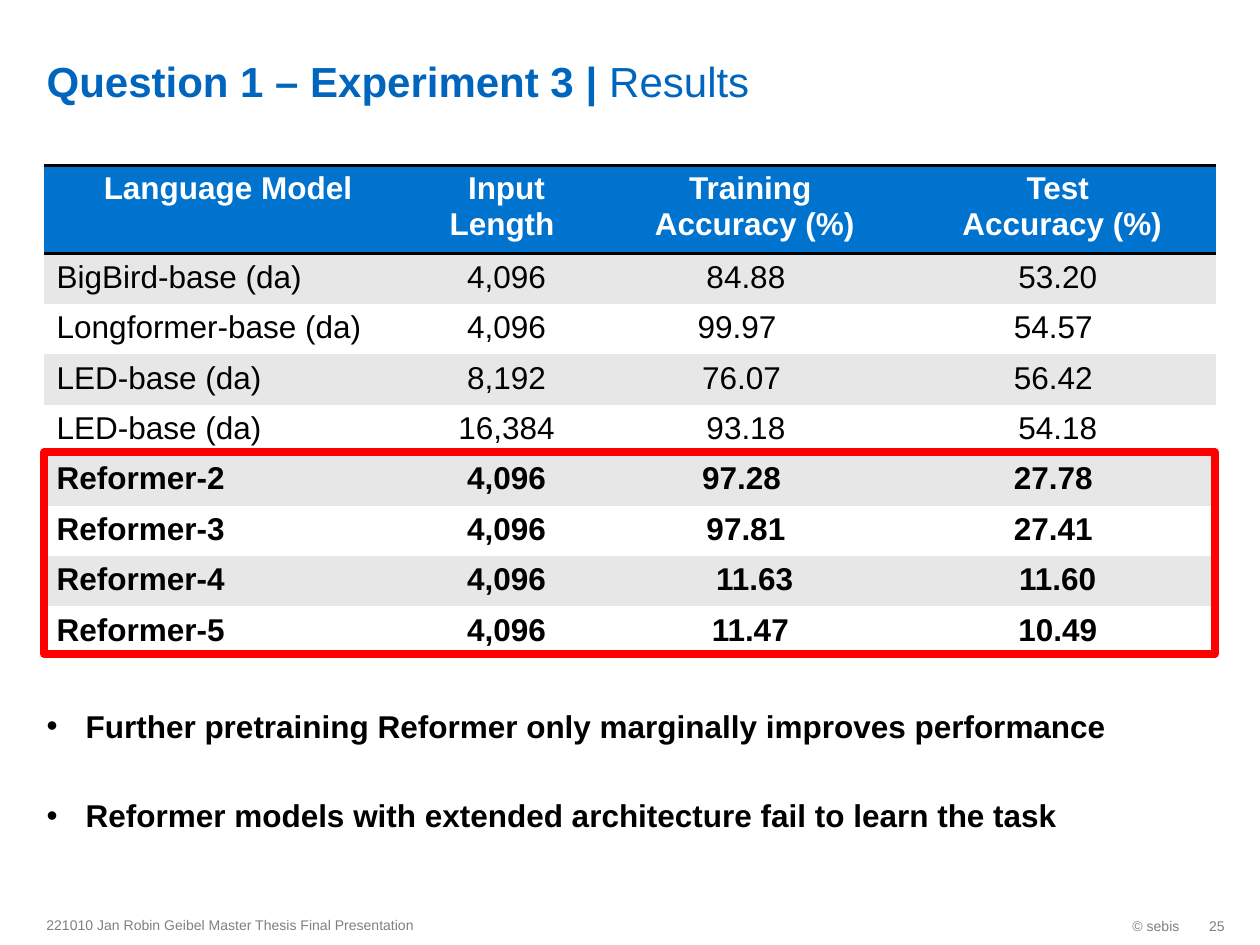
from pptx import Presentation
from pptx.dml.color import RGBColor
from pptx.enum.shapes import MSO_SHAPE as Shape
from pptx.enum.text import MSO_ANCHOR as Anchor, MSO_AUTO_SIZE as AutoSize, PP_ALIGN as Align
from pptx.oxml import parse_xml
from pptx.oxml.ns import nsdecls, qn
from pptx.util import Inches, Pt

BLUE, HEADER_BLUE, BLACK, WHITE = "0065BD", "0073CF", "000000", "FFFFFF"
GREY, BAND, RED = "808080", "E7E7E7", "FF0000"
NO_STYLE = "{2D5ABB26-0587-4C30-8999-92F81FD0307C}"
SPACE_WIDTH = 0.07

COLUMN_WIDTHS = [2.92, 1.5, 2.44, 2.44]
HEADERS = ["Language Model", "Input Length ", "Training \nAccuracy (%)", "Test \nAccuracy (%)"]
RESULTS = [
    ("BigBird-base (da)", "4,096", "84.88", "53.20"),
    ("Longformer-base (da)", "4,096", "99.97", "54.57"),
    ("LED-base (da)", "8,192", "76.07", "56.42"),
    ("LED-base (da)", "16,384", "93.18", "54.18"),
    ("Reformer-2", "4,096", "97.28", "27.78"),
    ("Reformer-3", "4,096", "97.81", "27.41"),
    ("Reformer-4", "4,096", "11.63", "11.60"),
    ("Reformer-5", "4,096", "11.47", "10.49"),
]
OFFSETS = {2: [2, 4, 3, 2, 3, 2, 0, 1], 3: [1, 2, 2, 1, 2, 2, 1, 1]}
FINDINGS = [
    "Further pretraining Reformer only marginally improves performance",
    "Reformer models with extended architecture fail to learn the task",
]


def color(value):
    return RGBColor.from_string(value)


def style(font, size, fill, bold=False):
    font.name = "Arial"
    font.size = Pt(size)
    font.bold = bold
    font.color.rgb = color(fill)


def place(shape, left, top, width, height):
    shape.left, shape.top = Inches(left), Inches(top)
    shape.width, shape.height = Inches(width), Inches(height)


def add_title(page, strong, light):
    title = page.shapes.title
    place(title, 0.27, 0.05, 8.24, 0.79)
    frame = title.text_frame
    frame.auto_size = AutoSize.NONE
    frame.vertical_anchor = Anchor.BOTTOM
    frame.margin_top = frame.margin_bottom = 0
    para = frame.paragraphs[0]
    para.alignment = Align.LEFT
    for text, bold in ((strong, True), (light, False)):
        span = para.add_run()
        span.text = text
        style(span.font, 24, BLUE, bold)


def add_findings(page):
    body = page.placeholders[1]
    place(body, 0.27, 5.56, 9.45, 1.34)
    frame = body.text_frame
    frame.auto_size = AutoSize.NONE
    frame.text = "\n".join(FINDINGS)
    for index, para in enumerate(frame.paragraphs):
        properties = para._p.get_or_add_pPr()
        properties.set("marL", str(Inches(0.31)))
        properties.set("indent", str(-Inches(0.31)))
        para.space_before = Pt(29.6 if index else 0)
        for span in para.runs:
            style(span.font, 18, BLACK, True)


def add_border(cell, side):
    line = parse_xml(
        f'<a:{side} {nsdecls("a")} w="{Pt(2)}"><a:solidFill><a:srgbClr val="{BLACK}"/>'
        f"</a:solidFill></a:{side}>"
    )
    cell._tc.get_or_add_tcPr().append(line)


def fill_cell(cell, text, fill, font_color, bold, align, borders, offset=0):
    cell.text_frame.text = text
    cell.margin_right = Inches(0.1 + offset * SPACE_WIDTH)
    for para in cell.text_frame.paragraphs:
        para.alignment = align
        for span in para.runs:
            style(span.font, 18, font_color, bold)
    for side in borders:
        add_border(cell, side)
    cell.fill.solid()
    cell.fill.fore_color.rgb = color(fill)


def add_results(page):
    frame = page.shapes.add_table(
        len(RESULTS) + 1, len(HEADERS), Inches(0.35), Inches(1.31), Inches(9.3), Inches(3.81)
    )
    table = frame.table
    table.horz_banding = False
    table._tbl.tblPr.find(qn("a:tableStyleId")).text = NO_STYLE
    for column, width in zip(table.columns, COLUMN_WIDTHS):
        column.width = Inches(width)
    for index, row in enumerate(table.rows):
        row.height = Inches(0.39 if index else 0.67)
    for column, text in enumerate(HEADERS):
        fill_cell(table.cell(0, column), text, HEADER_BLUE, WHITE, True, Align.CENTER, ("a:lnT"[2:], "lnB"))
    for index, result in enumerate(RESULTS):
        fill = WHITE if index % 2 else BAND
        bold = result[0].startswith("Reformer")
        borders = ("lnB",) if index == len(RESULTS) - 1 else ()
        for column, text in enumerate(result):
            align = Align.CENTER if column else Align.LEFT
            offset = OFFSETS[column][index] if column in OFFSETS else 0
            fill_cell(table.cell(index + 1, column), text, fill, BLACK, bold, align, borders, offset)


def add_highlight(page):
    frame = page.shapes.add_shape(
        Shape.RECTANGLE, Inches(0.35), Inches(3.59), Inches(9.29), Inches(1.6)
    )
    frame.shadow.inherit = False
    frame.fill.background()
    frame.line.color.rgb = color(RED)
    frame.line.width = Pt(4.5)


def add_footer(page, text, left, top, width, align, margin_right=0.1):
    box = page.shapes.add_textbox(Inches(left), Inches(top), Inches(width), Inches(0.32))
    frame = box.text_frame
    frame.word_wrap = True
    frame.vertical_anchor = Anchor.MIDDLE
    frame.margin_right = Inches(margin_right)
    frame.text = text
    para = frame.paragraphs[0]
    para.alignment = align
    style(para.runs[0].font, 8, GREY)


def main():
    deck = Presentation()
    deck.slide_width, deck.slide_height = Inches(10), Inches(7.5)
    page = deck.slides.add_slide(deck.slide_layouts[1])
    add_title(page, "Question 1 – Experiment 3 | ", "Results")
    add_footer(page, "© sebis", 7.7, 7.19, 1.76, Align.RIGHT)
    add_footer(page, "221010 Jan Robin Geibel Master Thesis Final Presentation", 0.27, 7.18, 4.73, Align.LEFT)
    add_footer(page, "25", 9.45, 7.19, 0.27, Align.RIGHT, 0)
    add_findings(page)
    add_results(page)
    add_highlight(page)
    deck.save("out.pptx")


if __name__ == "__main__":
    main()
